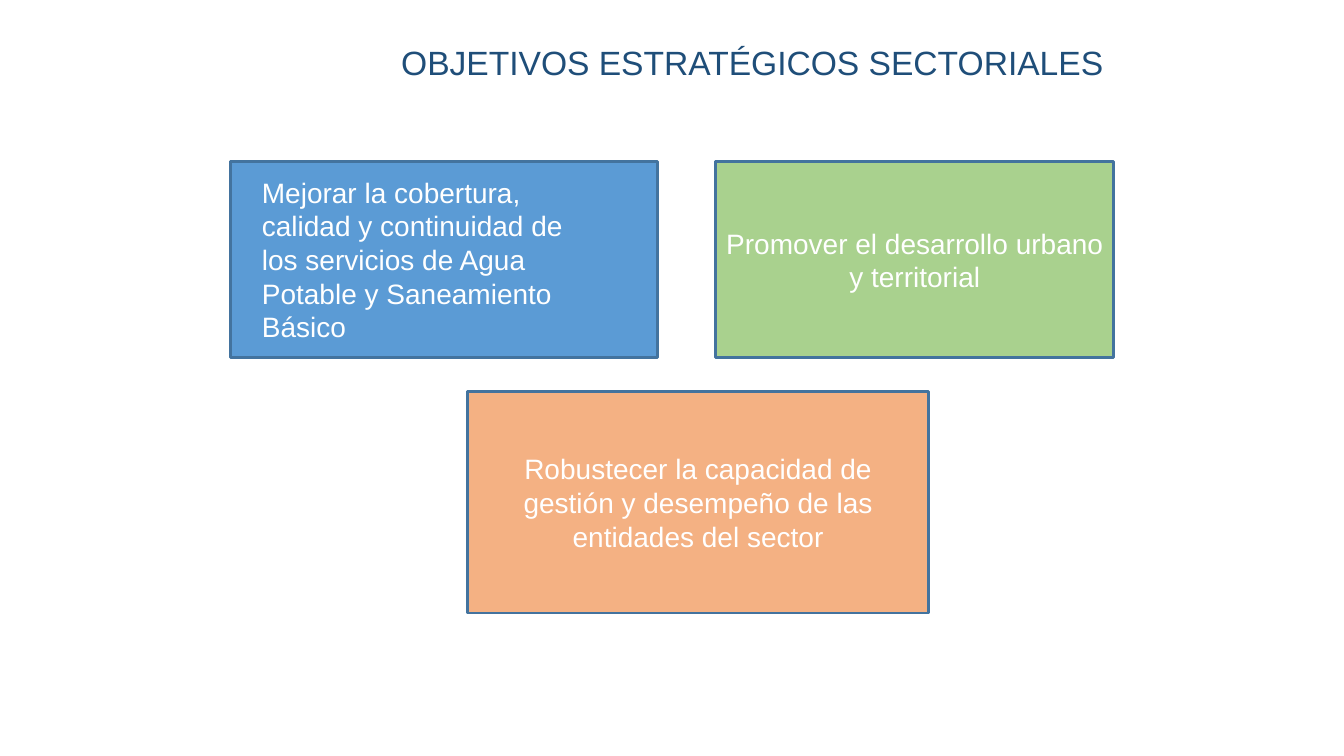
from pptx import Presentation
from pptx.dml.color import RGBColor
from pptx.enum.shapes import MSO_SHAPE
from pptx.enum.text import MSO_ANCHOR, PP_ALIGN
from pptx.util import Cm, Pt

NAVY = RGBColor(0x1F, 0x4E, 0x79)
BLUE = RGBColor(0x5B, 0x9B, 0xD5)
GREEN = RGBColor(0xA9, 0xD1, 0x8E)
ORANGE = RGBColor(0xF4, 0xB1, 0x83)
OUTLINE = RGBColor(0x43, 0x73, 0x9E)
WHITE = RGBColor(0xFF, 0xFF, 0xFF)


def write_text(box, text, size, color, align=PP_ALIGN.LEFT, anchor=MSO_ANCHOR.TOP):
    frame = box.text_frame
    frame.word_wrap = True
    frame.vertical_anchor = anchor
    para = frame.paragraphs[0]
    para.alignment = align
    span = para.add_run()
    span.text = text
    for name, value in {"name": "Arial", "size": Pt(size)}.items():
        setattr(span.font, name, value)
    span.font.color.rgb = color


deck = Presentation()
deck.slide_width, deck.slide_height = Cm(33.87), Cm(19.05)
page = deck.slides.add_slide(deck.slide_layouts[6])

title = page.shapes.add_textbox(Cm(9.86), Cm(0.94), Cm(18.21), Cm(1.27))
write_text(title, "OBJETIVOS ESTRATÉGICOS SECTORIALES", 24, NAVY)

# Left, top, width, height in cm, fill and centred text of each goal card
goal_cards = [
    (5.8, 4.07, 10.77, 4.95, BLUE, ""),
    (18.04, 4.07, 10.03, 4.95, GREEN, "Promover el desarrollo urbano y territorial"),
    (11.79, 9.86, 11.61, 5.59, ORANGE,
     "Robustecer la capacidad de gestión y desempeño de las entidades del sector"),
]
for left, top, width, height, fill, goal in goal_cards:
    card = page.shapes.add_shape(
        MSO_SHAPE.RECTANGLE, Cm(left), Cm(top), Cm(width), Cm(height))
    card.shadow.inherit = False
    card.fill.solid()
    card.fill.fore_color.rgb = fill
    card.line.color.rgb = OUTLINE
    card.line.width = Pt(2)
    if goal:
        write_text(card, goal, 20, WHITE, PP_ALIGN.CENTER, MSO_ANCHOR.MIDDLE)

water_goal = page.shapes.add_textbox(Cm(6.35), Cm(4.29), Cm(8.97), Cm(4.52))
write_text(
    water_goal,
    "Mejorar la cobertura, calidad y continuidad de los servicios de Agua "
    "Potable y Saneamiento Básico",
    20, WHITE)

deck.save("out.pptx")
